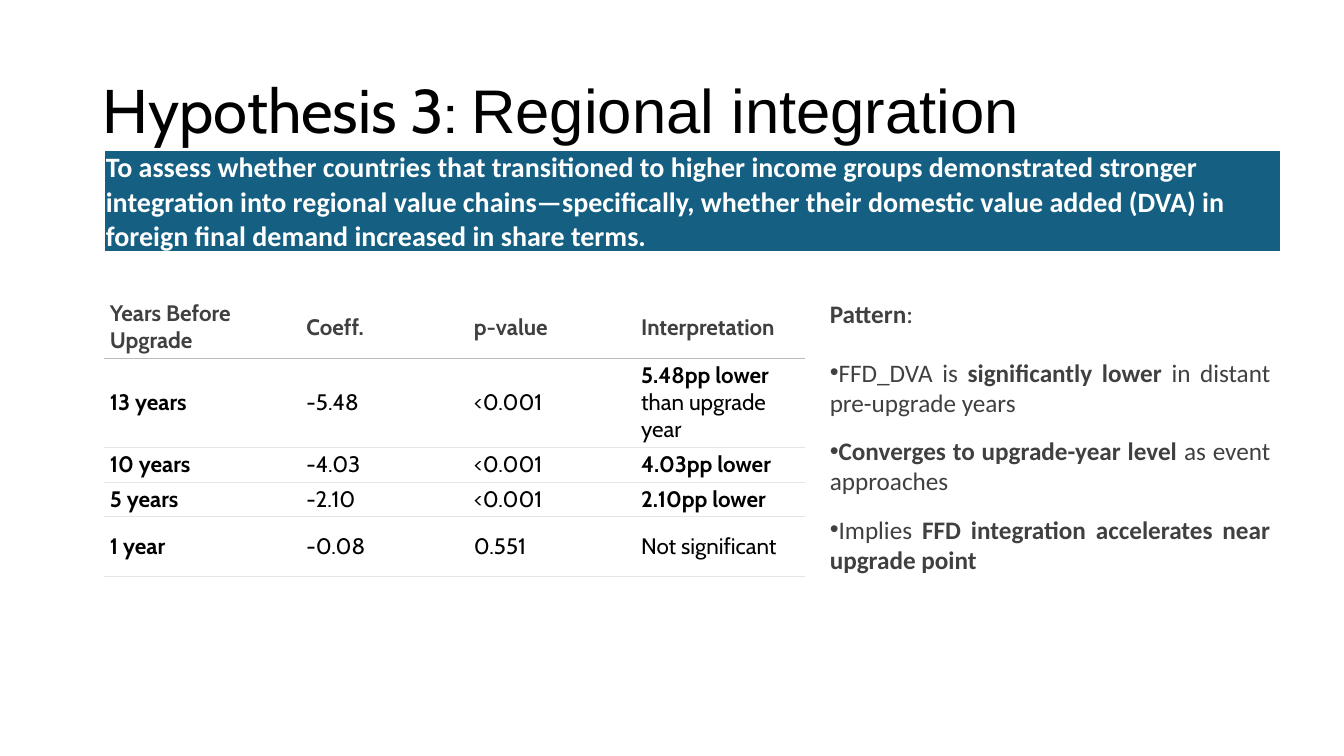
from dataclasses import dataclass

from lxml.etree import SubElement
from pptx import Presentation
from pptx.dml.color import RGBColor
from pptx.enum.text import MSO_ANCHOR, MSO_AUTO_SIZE, PP_ALIGN
from pptx.oxml.ns import qn
from pptx.util import Inches, Pt

TITLE = [("Hypothesis 3: ", "Cabin"), ("Regional integration", "Arial")]
OBJECTIVE = (
    "**To assess whether countries that transitioned to higher income groups "
    "demonstrated stronger integration into regional value chains—specifically, "
    "whether their domestic value added (DVA) in foreign final demand increased "
    "in share terms.**"
)
RESULTS = [
    ("**Years Before Upgrade**", "**Coeff.**", "**p-value**", "**Interpretation**"),
    ("**13 years**", "-5.48", "<0.001", "**5.48pp lower** than upgrade year"),
    ("**10 years**", "-4.03", "<0.001", "**4.03pp lower**"),
    ("**5 years**", "-2.10", "<0.001", "**2.10pp lower**"),
    ("**1 year**", "-0.08", "0.551", "Not significant"),
]
PATTERN_HEADING = "**Pattern**:"
PATTERN_POINTS = [
    "FFD_DVA is **significantly lower** in distant pre-upgrade years",
    "**Converges to upgrade-year level** as event approaches",
    "Implies **FFD integration accelerates near upgrade point**",
]


@dataclass(frozen=True)
class Theme:
    table_font: str = "Cabin"
    body_font: str = "Calibri"
    title_size: int = 44
    objective_size: int = 20
    body_size: int = 18
    table_size: int = 16
    black: str = "000000"
    white: str = "FFFFFF"
    grey: str = "404040"
    blue: str = "156082"
    header_rule: str = "BBBBBB"
    row_rule: str = "E5E5E5"


THEME = Theme()
WIDTH, HEIGHT = 13.33, 7.5
LEFT, RIGHT = 1.04, 12.7
TITLE_BOX = (0.92, 0.4, 11.5, 1.45)
OBJECTIVE_TOP, OBJECTIVE_HEIGHT = 1.49, 1.02
RESULTS_TOP = 2.94
RESULT_COLUMNS = [1.96] + [1.66] * 3
RESULT_ROWS = [0.59, 0.85, 0.33, 0.33, 0.59]
PATTERN_LEFT, PATTERN_TOP, PATTERN_HEIGHT = 8.13, 2.91, 2.81


def place(shape, *box):
    shape.left, shape.top, shape.width, shape.height = map(Inches, box)


def write(paragraph, text, font, size, color):
    paragraph.font.name = font
    paragraph.font.size = Pt(size)
    paragraph.font.color.rgb = RGBColor.from_string(color)
    for index, part in enumerate(text.split("**")):
        if part:
            run = paragraph.add_run()
            run.text = part
            run.font.bold = index % 2 == 1


def set_borders(cell, borders):
    properties = cell._tc.get_or_add_tcPr()
    sides = [side for side in "LRTB" if side in borders]
    for index, side in enumerate(sides):
        color, width = borders[side]
        line = SubElement(properties, qn(f"a:ln{side}"), w=str(Pt(width)))
        fill = SubElement(line, qn("a:solidFill"))
        SubElement(fill, qn("a:srgbClr"), val=color)
        properties.insert(index, line)


def add_grid(slide, left, top, columns, rows):
    table = slide.shapes.add_table(
        len(rows), len(columns), Inches(left), Inches(top),
        Inches(sum(columns)), Inches(sum(rows)),
    ).table
    table.first_row = table.horz_banding = False
    for column, width in zip(table.columns, columns):
        column.width = Inches(width)
    for row, height in zip(table.rows, rows):
        row.height = Inches(height)
    return table


def fill_cell(cell, text, font, size, color, background, margins, borders):
    cell.vertical_anchor = MSO_ANCHOR.MIDDLE
    cell.margin_left, cell.margin_top, cell.margin_right, cell.margin_bottom = map(Inches, margins)
    cell.fill.solid()
    cell.fill.fore_color.rgb = RGBColor.from_string(background)
    set_borders(cell, borders)
    write(cell.text_frame.paragraphs[0], text, font, size, color)


def add_title(title):
    place(title, *TITLE_BOX)
    title.text_frame.vertical_anchor = MSO_ANCHOR.MIDDLE
    title.text_frame.auto_size = MSO_AUTO_SIZE.NONE
    paragraph = title.text_frame.paragraphs[0]
    paragraph.alignment = PP_ALIGN.LEFT
    paragraph.line_spacing = 0.9
    paragraph.font.size = Pt(THEME.title_size)
    paragraph.font.color.rgb = RGBColor.from_string(THEME.black)
    for text, font in TITLE:
        run = paragraph.add_run()
        run.text = text
        run.font.name = font


def add_results(slide):
    table = add_grid(slide, LEFT, RESULTS_TOP, RESULT_COLUMNS, RESULT_ROWS)
    header_rule, row_rule = (THEME.header_rule, 0.33), (THEME.row_rule, 0.33)
    for row, texts in enumerate(RESULTS):
        borders = {"B": row_rule if row else header_rule}
        if row:
            borders["T"] = header_rule if row == 1 else row_rule
        for column, text in enumerate(texts):
            fill_cell(
                table.cell(row, column), text, THEME.table_font, THEME.table_size,
                THEME.black if row else THEME.grey, THEME.white,
                (0.04 if column else 0.05, 0.04, 0.04, 0.04), borders,
            )


def add_objective(slide):
    table = add_grid(slide, LEFT, OBJECTIVE_TOP, [RIGHT - LEFT], [OBJECTIVE_HEIGHT])
    borders = {side: (THEME.white, 3 if side == "B" else 1) for side in "LRTB"}
    fill_cell(
        table.cell(0, 0), OBJECTIVE, THEME.body_font, THEME.objective_size,
        THEME.white, THEME.blue, (0.01,) * 4, borders,
    )


def add_pattern(body):
    place(body, PATTERN_LEFT, PATTERN_TOP, RIGHT - PATTERN_LEFT, PATTERN_HEIGHT)
    frame = body.text_frame
    frame.auto_size = MSO_AUTO_SIZE.SHAPE_TO_FIT_TEXT
    for index, text in enumerate([PATTERN_HEADING] + PATTERN_POINTS):
        paragraph = frame.add_paragraph() if index else frame.paragraphs[0]
        paragraph.alignment = PP_ALIGN.JUSTIFY
        paragraph.line_spacing = Pt(21.4)
        paragraph.space_before = Pt(10.3 if index < 2 else 3)
        paragraph.space_after = Pt(10.3)
        properties = paragraph._p.get_or_add_pPr()
        properties.set("marL", "0")
        properties.set("indent", "0")
        if index:
            SubElement(properties, qn("a:buFont"), typeface="Arial")
            SubElement(properties, qn("a:buChar"), char="•")
        else:
            SubElement(properties, qn("a:buNone"))
        write(paragraph, text, THEME.body_font, THEME.body_size, THEME.grey)


def main():
    presentation = Presentation()
    presentation.slide_width, presentation.slide_height = Inches(WIDTH), Inches(HEIGHT)
    slide = presentation.slides.add_slide(presentation.slide_layouts[1])
    add_title(slide.shapes.title)
    add_results(slide)
    add_objective(slide)
    add_pattern(slide.placeholders[1])
    presentation.save("out.pptx")


if __name__ == "__main__":
    main()
